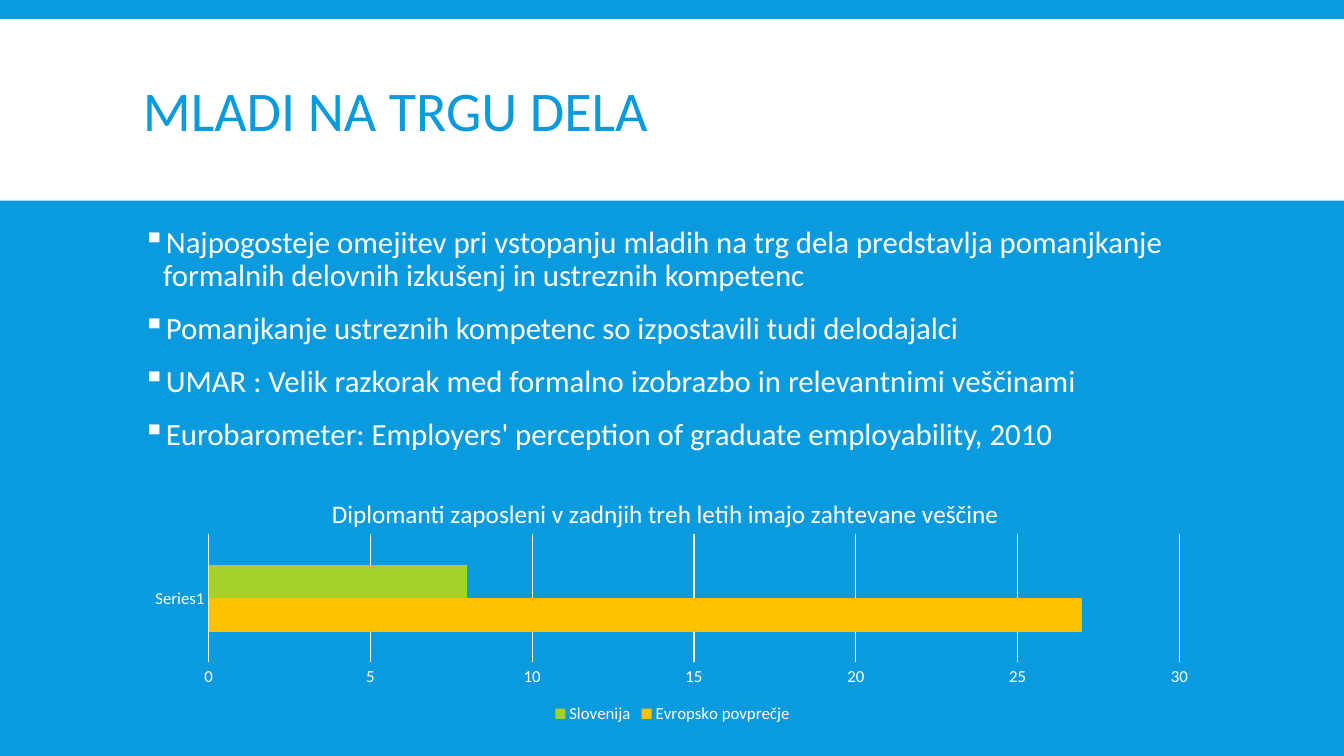
from lxml.etree import SubElement
from pptx import Presentation
from pptx.chart.data import CategoryChartData
from pptx.dml.color import RGBColor
from pptx.enum.chart import XL_CHART_TYPE, XL_LEGEND_POSITION, XL_TICK_MARK
from pptx.enum.shapes import MSO_SHAPE
from pptx.enum.text import MSO_ANCHOR
from pptx.oxml import parse_xml
from pptx.oxml.ns import nsdecls, qn
from pptx.util import Inches, Pt

BLUE, WHITE, GREEN, AMBER = "099BDD", "FFFFFF", "A5D028", "FFC000"
WIDTH, HEIGHT = 13.33, 7.5
LEFT, CONTENT_WIDTH = 1.32, 10.7

BULLETS = [
    "Najpogosteje omejitev pri vstopanju mladih na trg dela predstavlja "
    "pomanjkanje formalnih delovnih izkušenj in ustreznih kompetenc",
    "Pomanjkanje ustreznih kompetenc so izpostavili tudi delodajalci",
    "UMAR : Velik razkorak med formalno izobrazbo in relevantnimi veščinami",
    "Eurobarometer: Employers' perception of graduate employability, 2010",
]
SERIES = [("Evropsko povprečje", 27, AMBER), ("Slovenija", 8, GREEN)]
CHART_TITLE = "Diplomanti zaposleni v zadnjih treh letih imajo zahtevane veščine"


def inches(box):
    return [Inches(v) for v in box]


def paint(fill, color):
    fill.solid()
    fill.fore_color.rgb = RGBColor.from_string(color)


def style_font(font, size, color=WHITE):
    for name, value in {"name": "Calibri", "size": Pt(size), "bold": False}.items():
        setattr(font, name, value)
    font.color.rgb = RGBColor.from_string(color)


def style_line(line, color=WHITE):
    line.width = Pt(0.75)
    paint(line.fill, color)


def add_text_frame(s, box):
    tf = s.shapes.add_textbox(*inches(box)).text_frame
    tf.word_wrap = True
    return tf


def add_title(s, band, box, text):
    sp = s.shapes.add_shape(MSO_SHAPE.RECTANGLE, *inches(band))
    sp.shadow.inherit = False
    paint(sp.fill, WHITE)
    sp.line.fill.background()
    tf = add_text_frame(s, box)
    tf.vertical_anchor = MSO_ANCHOR.MIDDLE
    p = tf.paragraphs[0]
    p.line_spacing = 0.85
    r = p.add_run()
    r.text = text
    style_font(r.font, 40, BLUE)


def add_bullets(s, box, items):
    tf = add_text_frame(s, box)
    spacing = {"line_spacing": 0.9, "space_before": Pt(12), "space_after": Pt(2)}
    for i, item in enumerate(items):
        p = tf.add_paragraph() if i else tf.paragraphs[0]
        for name, value in spacing.items():
            setattr(p, name, value)
        pPr = p._p.get_or_add_pPr()
        pPr.set("marL", str(Inches(0.2)))
        pPr.set("indent", str(Inches(-0.2)))
        SubElement(pPr, qn("a:buChar")).set("char", "▪")
        r = p.add_run()
        r.text = item
        style_font(r.font, 22)


def set_layout(parent, shares, inner=False):
    """Place a chart part by shares of the chart's size."""
    for old in parent.findall(qn("c:layout")):
        parent.remove(old)
    target = '<c:layoutTarget val="inner"/>' if inner else ""
    modes = '<c:xMode val="edge"/><c:yMode val="edge"/>'
    values = "".join(f'<c:{k} val="{v}"/>' for k, v in shares.items())
    layout = parse_xml(f"<c:layout {nsdecls('c')}><c:manualLayout>"
                       f"{target}{modes}{values}</c:manualLayout></c:layout>")
    tx = parent.find(qn("c:tx"))
    parent.insert(0 if tx is None else 1, layout)


def add_skills_chart(s, box):
    data = CategoryChartData()
    data.categories = ["Series1"]
    for name, value, _ in SERIES:
        data.add_series(name, [value])
    chart = s.shapes.add_chart(XL_CHART_TYPE.BAR_CLUSTERED, *inches(box), data).chart
    style_font(chart.font, 12)

    tf = chart.chart_title.text_frame
    tf.text = CHART_TITLE
    style_font(tf.paragraphs[0].runs[0].font, 18)
    chart.chart_title.include_in_layout = False
    set_layout(chart.chart_title._element, {"x": 0.18, "y": 0.06})

    plot = chart.plots[0]
    plot.gap_width = 182
    plot.vary_by_categories = False
    for series, (_, _, color) in zip(plot.series, SERIES):
        paint(series.format.fill, color)

    for axis in (chart.category_axis, chart.value_axis):
        axis.major_tick_mark = axis.minor_tick_mark = XL_TICK_MARK.NONE
        style_font(axis.tick_labels.font, 12)
    style_line(chart.category_axis.format.line)
    values = chart.value_axis
    for name, value in {"minimum_scale": 0, "maximum_scale": 30, "major_unit": 5}.items():
        setattr(values, name, value)
    values.format.line.fill.background()
    style_line(values.major_gridlines.format.line)

    chart.has_legend = True
    chart.legend.position = XL_LEGEND_POSITION.BOTTOM
    chart.legend.include_in_layout = False
    style_font(chart.legend.font, 12)
    plot_area = chart._chartSpace.chart.plotArea
    set_layout(plot_area, {"x": 0.07, "y": 0.23, "w": 0.9, "h": 0.51}, inner=True)


def main():
    prs = Presentation()
    prs.slide_width, prs.slide_height = Inches(WIDTH), Inches(HEIGHT)
    s = prs.slides.add_slide(prs.slide_layouts[6])
    paint(s.background.fill, BLUE)
    add_title(s, (0, 0.19, WIDTH, 1.8), (LEFT, 0.31, CONTENT_WIDTH, 1.65),
              "MLADI NA TRGU DELA")
    add_bullets(s, (LEFT, 2.2, CONTENT_WIDTH, 4.6), BULLETS)
    add_skills_chart(s, (LEFT, 4.73, CONTENT_WIDTH, 2.49))
    prs.save("out.pptx")


if __name__ == "__main__":
    main()
